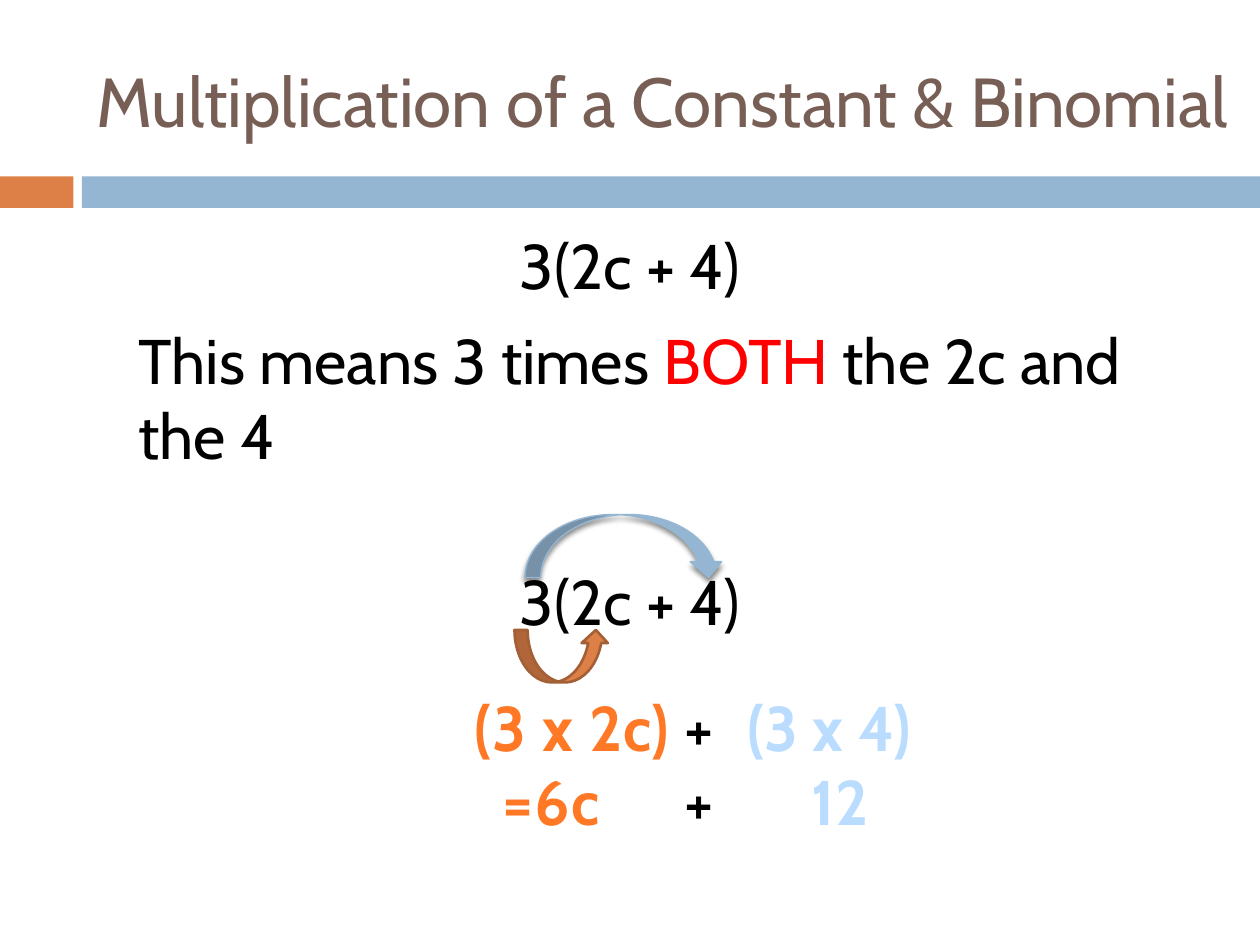
from dataclasses import dataclass
from typing import Any

import pptx
import pptx.dml.color
import pptx.enum.shapes
import pptx.enum.text
import pptx.oxml
import pptx.oxml.ns
import pptx.util

Pt = pptx.util.Pt
Shapes = pptx.enum.shapes.MSO_SHAPE
Align = pptx.enum.text.PP_ALIGN
Anchor = pptx.enum.text.MSO_ANCHOR

ORANGE, BLUE, BROWN = "DD8047", "94B6D2", "775F55"
BLACK, RED = "000000", "FF0000"
FIRST_PRODUCT, SECOND_PRODUCT = "FF7825", "BADDFF"
LINE_HEIGHT = 51
PRODUCT_TOP, RESULT_TOP = 390, 432
PLUS_LEFT, SECOND_LEFT = 384, 420

BODY = {"name": "Cabin", "size": Pt(36), "bold": False}
TITLE = BODY | {"size": Pt(39.6)}
BOLD = BODY | {"bold": True}

SHADOW = (
    f'<a:effectLst {pptx.oxml.ns.nsdecls("a")}>'
    '<a:outerShdw blurRad="38100" dist="30480" dir="5400000" rotWithShape="0">'
    '<a:srgbClr val="000000"><a:alpha val="45000"/></a:srgbClr>'
    "</a:outerShdw></a:effectLst>"
)


@dataclass(frozen=True)
class Box:
    left: float
    top: float
    width: float
    height: float = LINE_HEIGHT

    def lengths(self) -> list[int]:
        return [Pt(value) for value in (self.left, self.top, self.width, self.height)]


@dataclass(frozen=True)
class Figure:
    kind: Any
    box: Box
    fill: str
    line: str = ""
    line_width: float = 0
    shadow: bool = False


@dataclass(frozen=True)
class Label:
    box: Box
    runs: tuple[tuple[str, str], ...]
    font: dict[str, Any]
    align: Any = Align.LEFT
    anchor: Any = Anchor.TOP
    wrap: bool = True
    spacing: float = 0


def colour(value: str) -> pptx.dml.color.RGBColor:
    return pptx.dml.color.RGBColor.from_string(value)


def draw_figure(slide: Any, figure: Figure) -> None:
    shape = slide.shapes.add_shape(figure.kind, *figure.box.lengths())
    shape.fill.solid()
    shape.fill.fore_color.rgb = colour(figure.fill)
    if figure.line:
        shape.line.color.rgb = colour(figure.line)
        shape.line.width = Pt(figure.line_width)
    else:
        shape.line.fill.background()
    if figure.shadow:
        shape._element.spPr.append(pptx.oxml.parse_xml(SHADOW))
    else:
        shape.shadow.inherit = False


def draw_label(slide: Any, label: Label) -> None:
    frame = slide.shapes.add_textbox(*label.box.lengths()).text_frame
    frame.word_wrap = label.wrap
    frame.vertical_anchor = label.anchor
    paragraph = frame.paragraphs[0]
    paragraph.alignment = label.align
    for text, text_colour in label.runs:
        run = paragraph.add_run()
        run.text = text
        for attribute, value in label.font.items():
            setattr(run.font, attribute, value)
        run.font.color.rgb = colour(text_colour)
        if label.spacing:
            run._r.get_or_add_rPr().set("spc", str(round(label.spacing * 100)))


def expression(top: float) -> Label:
    return Label(Box(0, top, 720), (("3(2c + 4)", BLACK),), BODY, Align.CENTER)


def plus(top: float) -> Label:
    return Label(Box(PLUS_LEFT, top, 39), (("+", BLACK),), BODY, wrap=False)


BARS = (
    Figure(Shapes.RECTANGLE, Box(0, 100.8, 42, 18), ORANGE),
    Figure(Shapes.RECTANGLE, Box(46.8, 100.8, 673.2, 18), BLUE),
)
ARROW_TO_FIRST_TERM = Figure(
    Shapes.CURVED_UP_ARROW, Box(294, 360, 54, 30), ORANGE, "A35F35", 1.5
)
ARROW_TO_SECOND_TERM = Figure(
    Shapes.CURVED_DOWN_ARROW, Box(300, 294, 114, 36), BLUE, BLUE, 0.79, shadow=True
)
EXPLANATION = (("This means 3 times ", BLACK), ("BOTH", RED), (" the 2c and the 4", BLACK))

ELEMENTS = (
    *BARS,
    Label(
        Box(48, 18, 672, 78),
        (("Multiplication of a Constant & Binomial", BROWN),),
        TITLE,
        anchor=Anchor.MIDDLE,
    ),
    expression(126),
    Label(Box(72, 180, 620.6), EXPLANATION, BODY),
    expression(318),
    ARROW_TO_FIRST_TERM,
    Label(Box(264, PRODUCT_TOP, 133), (("(3 x 2c)", FIRST_PRODUCT),), BOLD,
          wrap=False, spacing=0.5),
    Label(Box(264, RESULT_TOP, 102), (("=6c", FIRST_PRODUCT),), BOLD,
          Align.CENTER, spacing=0.5),
    ARROW_TO_SECOND_TERM,
    Label(Box(SECOND_LEFT, PRODUCT_TOP, 120), (("(3 x 4)", SECOND_PRODUCT),), BOLD),
    plus(PRODUCT_TOP),
    plus(RESULT_TOP),
    Label(Box(SECOND_LEFT, RESULT_TOP, 120), (("12", SECOND_PRODUCT),), BOLD, Align.CENTER),
)


def main() -> None:
    presentation = pptx.Presentation()
    presentation.slide_width, presentation.slide_height = Pt(720), Pt(540)
    slide = presentation.slides.add_slide(presentation.slide_layouts[6])
    for element in ELEMENTS:
        if isinstance(element, Figure):
            draw_figure(slide, element)
        else:
            draw_label(slide, element)
    presentation.save("out.pptx")


if __name__ == "__main__":
    main()
